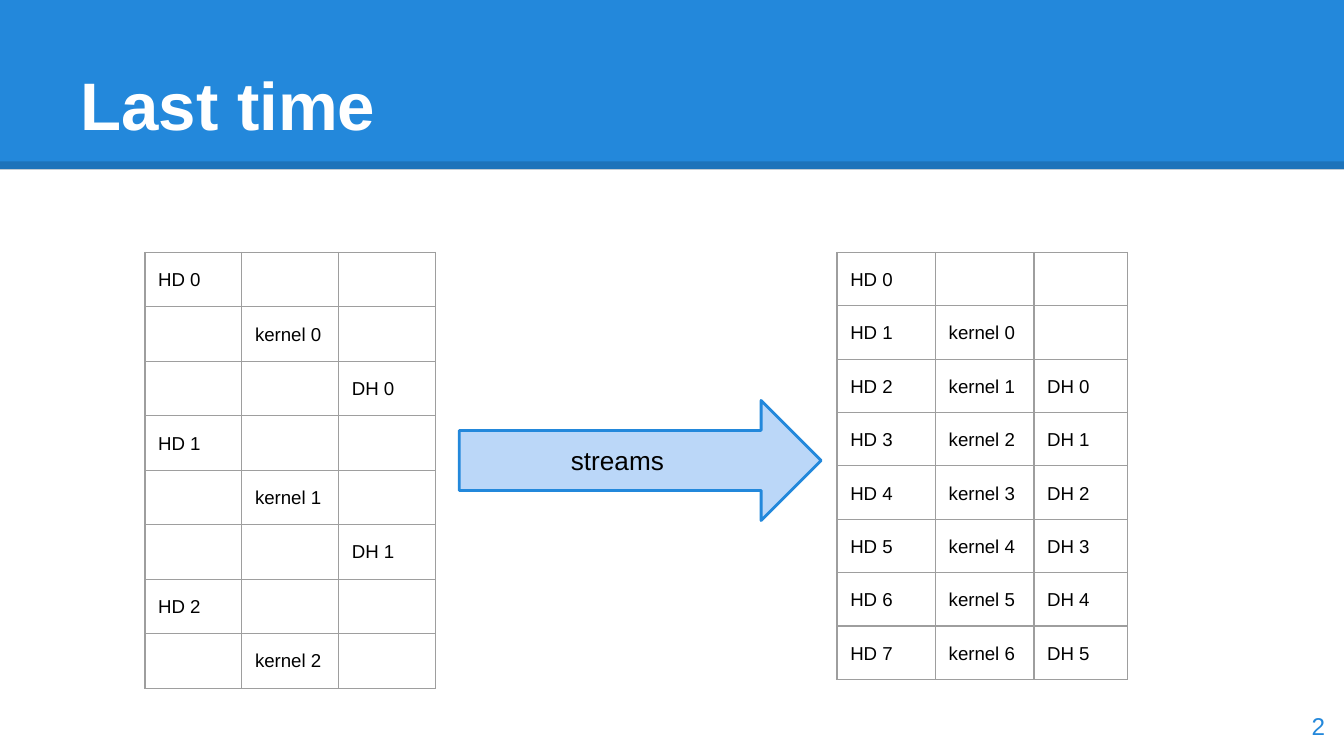
from pptx import Presentation
from pptx import util as u
from pptx.dml.color import RGBColor
from pptx.enum import shapes, text
from pptx.oxml import parse_xml
from pptx.oxml.ns import nsdecls, qn
from lxml import etree

BLUE, PALE, BLACK, WHITE, GRAY = "2388DB", "BBD7F8", "000000", "FFFFFF", "9E9E9E"
INSET = u.Cm(0.25)
CELL = {"size": u.Pt(10), "name": "Arial"}


def rgb(value):
    return RGBColor.from_string(value)


def box(left, top, width, height):
    return [u.Cm(v) for v in (left, top, width, height)]


def set_attrs(obj, values):
    for name, value in values.items():
        setattr(obj, name, value)


def set_margins(obj):
    set_attrs(obj, {f"margin_{side}": INSET for side in ("left", "right", "top", "bottom")})


def write(p, words, color, fmt):
    r = p.add_run()
    r.text = words
    set_attrs(r.font, fmt)
    r.font.color.rgb = rgb(color)


def add_text(s, place, words, color, size, anchor="TOP", align="LEFT", bold=False):
    tf = s.shapes.add_textbox(*box(*place)).text_frame
    set_margins(tf)
    set_attrs(tf, {"word_wrap": True, "vertical_anchor": getattr(text.MSO_ANCHOR, anchor)})
    p = tf.paragraphs[0]
    p.alignment = getattr(text.PP_ALIGN, align)
    write(p, words, color, {"size": u.Pt(size), "name": "Arial", "bold": bold})


def add_block(s, kind, place, fill, line=None):
    sp = s.shapes.add_shape(kind, *box(*place))
    sp.shadow.inherit = False
    sp.fill.solid()
    sp.fill.fore_color.rgb = rgb(fill)
    if line:
        sp.line.color.rgb = rgb(line)
        sp.line.width = u.Pt(1.5)
    else:
        sp.line.fill.background()


def add_shade_line(s, y, width):
    line = s.shapes.add_connector(
        shapes.MSO_CONNECTOR.STRAIGHT, 0, u.Cm(y), u.Cm(width), u.Cm(y))
    line.line.color.rgb = rgb(BLACK)
    line.line.width = u.Pt(4.5)
    sp_pr = line._element.spPr
    color = sp_pr.find(".//" + qn("a:srgbClr"))
    etree.SubElement(color, qn("a:alpha"), val="15000")
    etree.SubElement(sp_pr, qn("a:effectLst"))


def set_borders(cell):
    tc_pr = cell._tc.get_or_add_tcPr()
    for i, side in enumerate("LRTB"):
        tc_pr.insert(i, parse_xml(
            f'<a:ln{side} {nsdecls("a")} w="{u.Pt(0.75)}"><a:solidFill>'
            f'<a:srgbClr val="{GRAY}"/></a:solidFill></a:ln{side}>'))


def add_schedule(s, left, top, widths, row_height, rows):
    height = row_height * len(rows)
    table = s.shapes.add_table(
        len(rows), len(widths), *box(left, top, sum(widths), height)).table
    set_attrs(table, {"first_row": False, "horz_banding": False})
    for column, width in zip(table.columns, widths):
        column.width = u.Cm(width)
    for row, labels in zip(table.rows, rows):
        row.height = u.Cm(row_height)
        for cell, label in zip(row.cells, labels):
            set_margins(cell)
            cell.fill.background()
            set_borders(cell)
            p = cell.text_frame.paragraphs[0]
            p.line_spacing = 1.2
            if label:
                write(p, label, BLACK, CELL)
            else:
                # Keeps empty cells from stretching the row
                p._p.get_or_add_endParaRPr().set("sz", "1000")


def main():
    prs = Presentation()
    prs.slide_width, prs.slide_height = u.Cm(25.4), u.Cm(14.29)
    s = prs.slides.add_slide(prs.slide_layouts[6])

    # Title band
    add_block(s, shapes.MSO_SHAPE.RECTANGLE, (0, 0, 25.4, 3.2), BLUE)
    add_shade_line(s, 3.13, 25.4)
    add_text(s, (1.27, 0.58, 22.86, 2.39), "Last time", WHITE, 36, "BOTTOM", bold=True)

    # Schedules: overlapped stages on the right, one stage at a time on the left
    stages = ("HD", "kernel", "DH")
    overlapped = [[f"{stage} {step - i}" if step >= i else ""
                   for i, stage in enumerate(stages)] for step in range(8)]
    serial = [[f"{stage} {step // 3}" if step % 3 == i else ""
               for i, stage in enumerate(stages)] for step in range(8)]
    add_schedule(s, 15.82, 4.77, (1.86, 1.86, 1.77), 1, overlapped)
    add_schedule(s, 2.74, 4.77, (1.83, 1.83, 1.83), 1.03, serial)

    # Arrow between the schedules
    add_block(s, shapes.MSO_SHAPE.RIGHT_ARROW, (8.68, 7.57, 6.84, 2.27), PALE, BLUE)
    add_text(s, (10.54, 8.15, 3.12, 0.74), "streams", BLACK, 14)

    # Page number
    add_text(s, (23.77, 13.18, 1.52, 1.09), "2", BLUE, 13, "MIDDLE", "RIGHT")

    prs.save("out.pptx")


if __name__ == "__main__":
    main()
